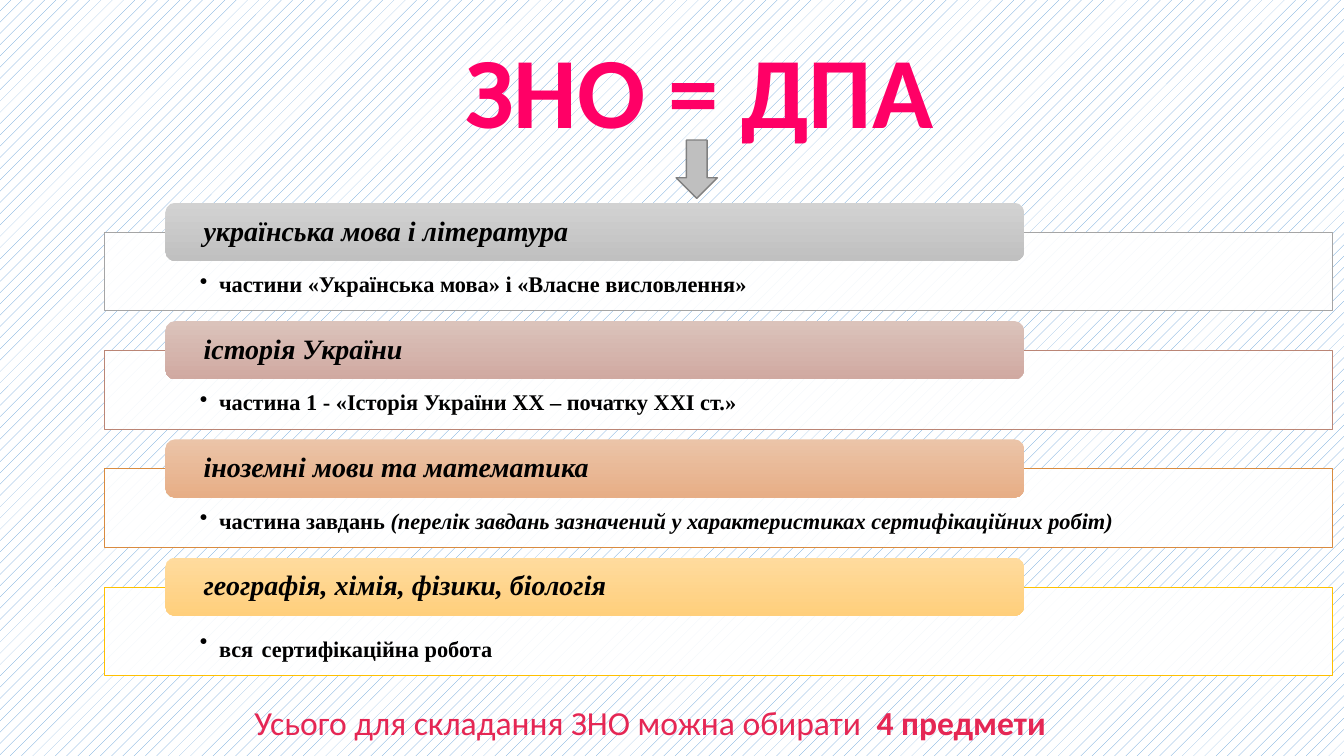
from lxml import etree
from pptx import Presentation
from pptx.dml.color import RGBColor
from pptx.enum.dml import MSO_PATTERN
from pptx.enum.shapes import MSO_SHAPE
from pptx.enum.text import MSO_ANCHOR, MSO_AUTO_SIZE, PP_ALIGN
from pptx.oxml.ns import qn
from pptx.util import Cm, Pt

WHITE = RGBColor(0xFF, 0xFF, 0xFF)
BLACK = RGBColor(0x00, 0x00, 0x00)
HATCH_BLUE = RGBColor(0x5B, 0x9B, 0xD5)
TITLE_PINK = RGBColor(0xFF, 0x00, 0x66)
SUMMARY_RED = RGBColor(0xE5, 0x27, 0x54)
ARROW_FILL = RGBColor(0xBF, 0xBF, 0xBF)
ARROW_LINE = RGBColor(0x80, 0x80, 0x80)

GREY = (RGBColor(0xA5, 0xA5, 0xA5), RGBColor(0xD2, 0xD2, 0xD2), RGBColor(0xC0, 0xC0, 0xC0))
ROSE = (RGBColor(0xBB, 0x86, 0x76), RGBColor(0xDB, 0xC3, 0xBB), RGBColor(0xD0, 0xA9, 0xA1))
ORANGE = (RGBColor(0xD9, 0x8B, 0x3F), RGBColor(0xEB, 0xC4, 0xA8), RGBColor(0xE7, 0xAE, 0x86))
GOLD = (RGBColor(0xFF, 0xC0, 0x00), RGBColor(0xFF, 0xDB, 0x9E), RGBColor(0xFF, 0xCF, 0x7C))

TITLE_FONT = {"name": "Calibri", "size": Pt(72), "bold": True}
SUBJECT_FONT = {"name": "Times New Roman", "size": Pt(20), "bold": True, "italic": True}
DETAIL_FONT = {"name": "Times New Roman", "size": Pt(16), "bold": True}
SUMMARY_FONT = {"name": "Calibri", "size": Pt(24)}

# Subject, detail runs with their format changes, colours, frame height
SUBJECTS = [
    ("українська мова і література",
     [("частини «Українська мова» і «Власне висловлення»", {})], GREY, Cm(1.98)),
    ("історія України",
     [("частина 1 - «Історія України ХХ – початку ХХІ ст.»", {})], ROSE, Cm(1.98)),
    ("іноземні мови та математика",
     [("частина завдань ", {}),
      ("(перелік завдань зазначений у характеристиках сертифікаційних робіт)",
       {"italic": True})], ORANGE, Cm(1.98)),
    ("географія, хімія, фізики, біологія",
     [("вся", {}), (" ", {"size": Pt(24)}), ("сертифікаційна робота", {})],
     GOLD, Cm(2.24)),
]
FIRST_TOP, PITCH, FRAME_DROP = Cm(5.11), Cm(2.98), Cm(0.74)


def apply(target, values):
    for name, value in values.items():
        setattr(target, name, value)


def write(shape, runs, font, color, frame_format, paragraph_format):
    """Fill the shape with one paragraph of formatted runs."""
    apply(shape.text_frame, {"word_wrap": True, **frame_format})
    paragraph = shape.text_frame.paragraphs[0]
    apply(paragraph, paragraph_format)
    for text, changes in runs:
        run = paragraph.add_run()
        run.text = text
        apply(run.font, {**font, **changes})
        run.font.color.rgb = color
    return paragraph


def add_bullet(paragraph):
    properties = paragraph._p.get_or_add_pPr()
    properties.set("marL", str(Cm(0.48)))
    properties.set("indent", str(-Cm(0.48)))
    etree.SubElement(properties, qn("a:buChar")).set("char", "•")


def add_outlined(slide, kind, box, fill, line, width):
    shape = slide.shapes.add_shape(kind, *box)
    shape.shadow.inherit = False
    shape.fill.solid()
    shape.fill.fore_color.rgb = fill
    shape.line.color.rgb = line
    shape.line.width = width
    return shape


def add_detail_frame(slide, top, height, line, runs):
    frame = add_outlined(slide, MSO_SHAPE.RECTANGLE, (Cm(2.64), top, Cm(30.94), height),
                         WHITE, line, Pt(0.5))
    tint = frame.fill._xPr.find(qn("a:solidFill"))[0]
    etree.SubElement(tint, qn("a:alpha")).set("val", "90000")
    detail = write(frame, runs, DETAIL_FONT, BLACK,
                   {"vertical_anchor": MSO_ANCHOR.TOP, "margin_left": Cm(2.4),
                    "margin_right": Cm(2.4), "margin_top": Cm(1.04),
                    "margin_bottom": Cm(0.3)},
                   {"alignment": PP_ALIGN.LEFT, "line_spacing": 0.9})
    add_bullet(detail)


def add_subject_bar(slide, top, shades, subject):
    bar = slide.shapes.add_shape(MSO_SHAPE.ROUNDED_RECTANGLE,
                                 Cm(4.17), top, Cm(21.64), Cm(1.47))
    bar.shadow.inherit = False
    bar.line.fill.background()
    bar.fill.gradient()
    bar.fill.gradient_angle = 270
    for stop, shade in zip(bar.fill.gradient_stops, shades):
        stop.color.rgb = shade
    write(bar, [(subject, {})], SUBJECT_FONT, BLACK,
          {"vertical_anchor": MSO_ANCHOR.MIDDLE, "margin_left": Cm(0.89),
           "margin_right": Cm(0.89), "margin_top": 0, "margin_bottom": 0},
          {"alignment": PP_ALIGN.LEFT, "line_spacing": 0.9})


def main():
    deck = Presentation()
    apply(deck, {"slide_width": Cm(33.87), "slide_height": Cm(19.05)})
    slide = deck.slides.add_slide(deck.slide_layouts[5])

    # Hatched background
    backdrop = slide.background.fill
    backdrop.patterned()
    backdrop.pattern = MSO_PATTERN.PERCENT_10
    backdrop.fore_color.rgb = HATCH_BLUE
    backdrop.back_color.rgb = WHITE

    # Title and arrow
    title = slide.shapes.title
    apply(title, {"left": Cm(6.71), "top": Cm(0.91), "width": Cm(21.84), "height": Cm(3.68)})
    write(title, [("ЗНО = ДПА", {})], TITLE_FONT, TITLE_PINK,
          {"vertical_anchor": MSO_ANCHOR.TOP, "auto_size": MSO_AUTO_SIZE.NONE},
          {"alignment": PP_ALIGN.CENTER, "line_spacing": 0.9})
    add_outlined(slide, MSO_SHAPE.DOWN_ARROW, (Cm(17.04), Cm(3.53), Cm(1.04), Cm(1.47)),
                 ARROW_FILL, ARROW_LINE, Pt(1))

    # Subjects with their details
    for row, (subject, detail, (line, *shades), height) in enumerate(SUBJECTS):
        top = FIRST_TOP + row * PITCH
        add_detail_frame(slide, top + FRAME_DROP, height, line, detail)
        add_subject_bar(slide, top, shades, subject)

    # Summary line
    summary = slide.shapes.add_textbox(Cm(0.94), Cm(17.55), Cm(30.89), Cm(1.27))
    write(summary, [("Усього для складання ЗНО можна обирати  ", {}),
                    ("4 предмети", {"bold": True})],
          SUMMARY_FONT, SUMMARY_RED, {"auto_size": MSO_AUTO_SIZE.SHAPE_TO_FIT_TEXT},
          {"alignment": PP_ALIGN.CENTER})

    deck.save("out.pptx")


if __name__ == "__main__":
    main()
